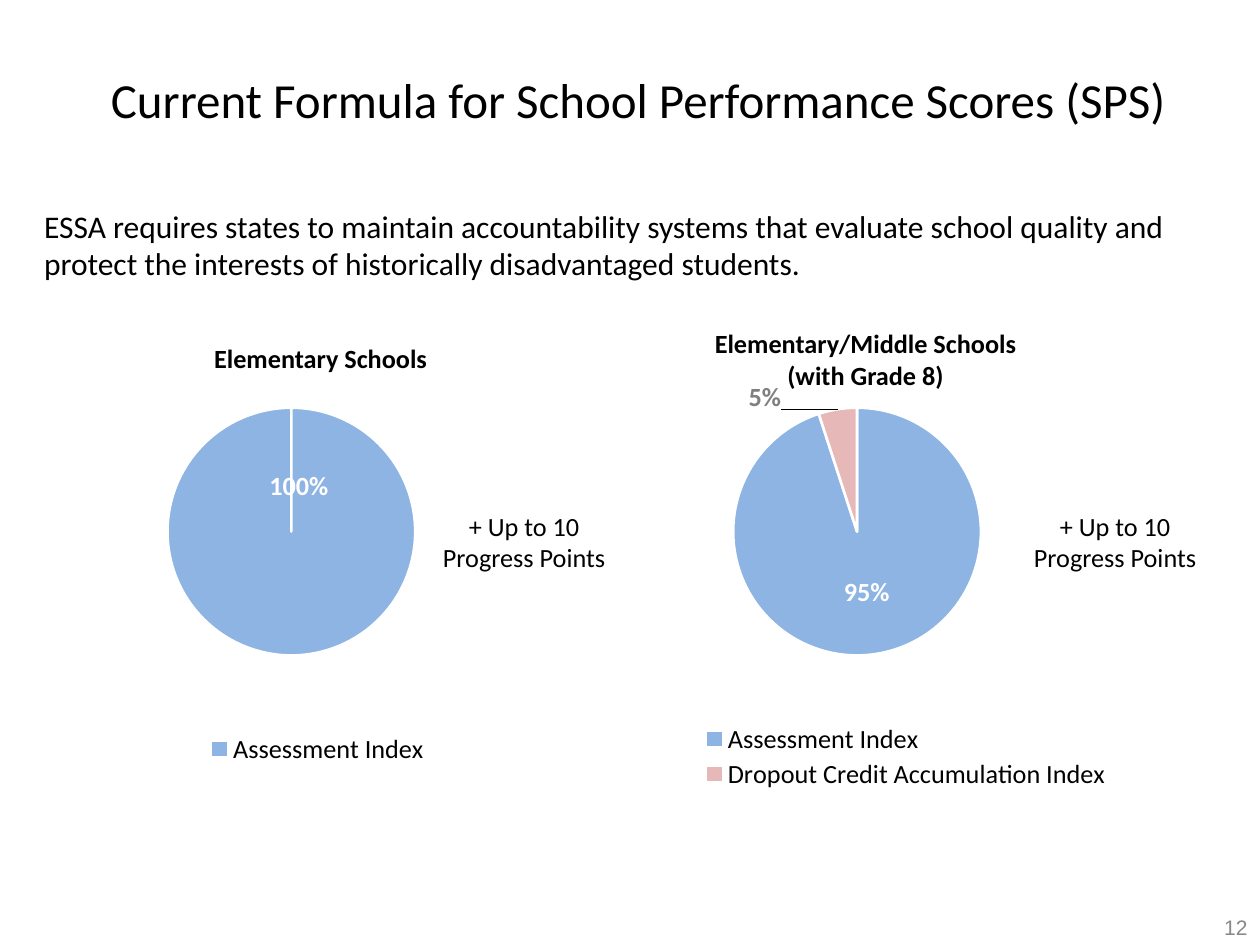
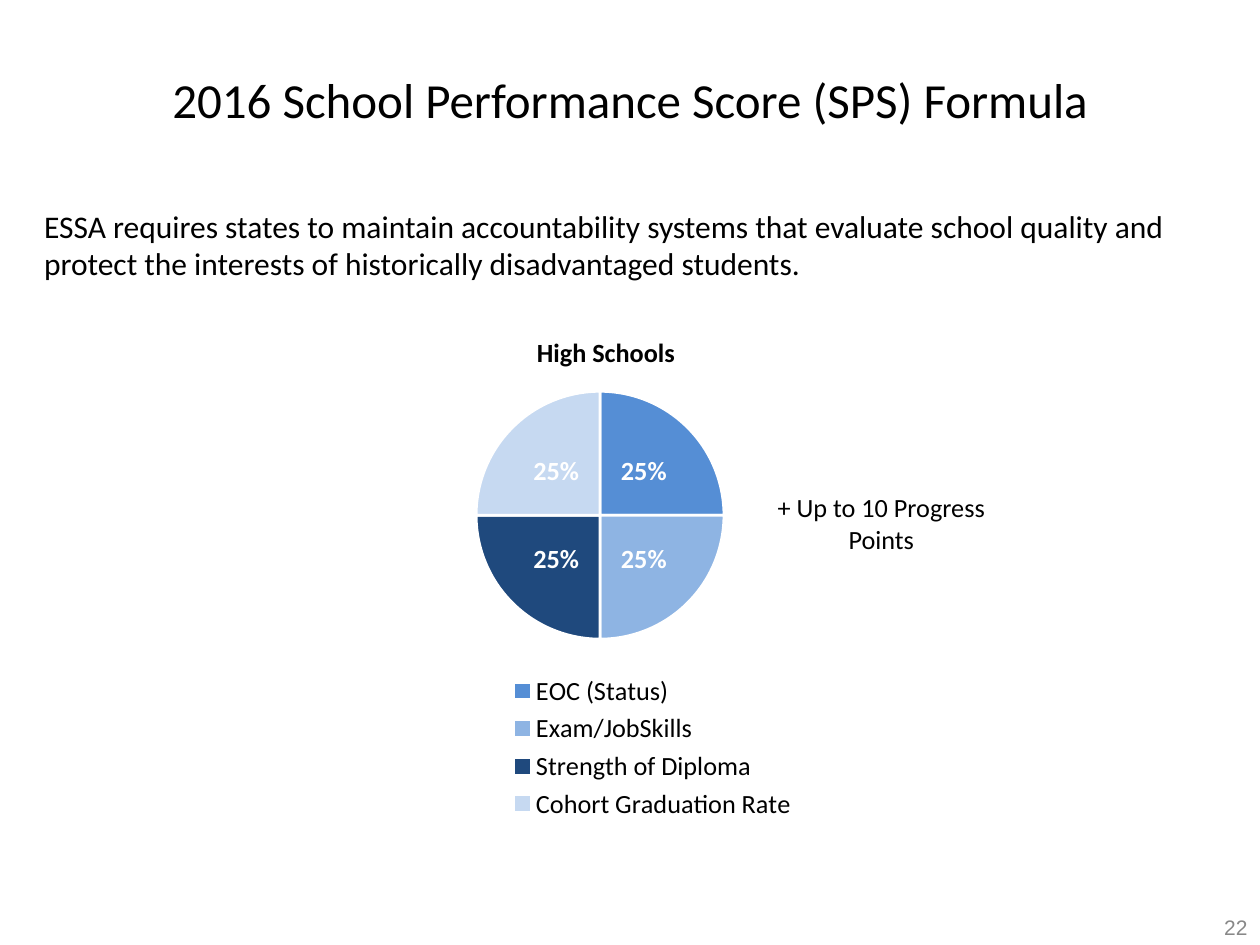
from dataclasses import dataclass

from pptx import Presentation
from pptx.chart.data import CategoryChartData
from pptx.dml.color import RGBColor
from pptx.enum.chart import XL_CHART_TYPE, XL_LABEL_POSITION, XL_LEGEND_POSITION
from pptx.enum.text import MSO_ANCHOR, MSO_AUTO_SIZE, PP_ALIGN
from pptx.oxml import parse_xml
from pptx.oxml.ns import nsdecls, qn
from pptx.util import Emu, Pt

EMU_PER_PX = 9144
CHART_WIDTH, CHART_HEIGHT = 596, 388
PLOT_AREA = {"x": 0.27, "y": 0.08, "w": 0.33, "h": 0.51}
INTRODUCTION = (
    "ESSA requires states to maintain accountability systems that evaluate school "
    "quality and protect the interests of historically disadvantaged students."
)
PROGRESS_POINTS = "+ Up to 10 Progress Points"


@dataclass(frozen=True)
class Theme:
    """Colours, fonts and type sizes shared by the slides."""

    font: str = "Calibri"
    number_font: str = "Arial"
    text: str = "000000"
    white: str = "FFFFFF"
    page_number: str = "888888"
    outside_label: str = "7F7F7F"
    sky: str = "8EB4E3"
    rose: str = "E6B9B8"
    blue: str = "558ED5"
    navy: str = "1F497D"
    pale: str = "C6D9F1"
    title_size: int = 28
    body_size: int = 18
    label_size: int = 15
    small_size: int = 12


def px(length):
    """Turn whole px into EMU."""
    return Emu(length * EMU_PER_PX)


def make_layout(target=None, **fractions):
    """Return a manual chart layout from fractions of the chart's size."""
    parts = f'<c:layoutTarget val="{target}"/>' if target else ""
    if "w" in fractions:
        parts += '<c:xMode val="edge"/><c:yMode val="edge"/>'
    parts += "".join(f'<c:{name} val="{value}"/>' for name, value in fractions.items())
    return parse_xml(
        f'<c:layout {nsdecls("c")}><c:manualLayout>{parts}</c:manualLayout></c:layout>'
    )


class Deck:
    """Hold the theme and the current slide, and draw each kind of element."""

    def __init__(self, theme):
        """Start an empty presentation."""
        self.theme = theme
        self.presentation = Presentation()
        self.presentation.slide_width = px(1000)
        self.presentation.slide_height = px(750)
        self.slide = None

    def format_font(self, font, size, color=None, bold=False, name=None):
        """Apply the theme's font with a size, colour and weight."""
        font.name = name or self.theme.font
        font.size = Pt(size)
        font.bold = bold
        font.color.rgb = RGBColor.from_string(color or self.theme.text)

    def add_slide(self, title, left, width, number):
        """Add a slide with its title, introduction and page number."""
        theme = self.theme
        self.slide = self.presentation.slides.add_slide(
            self.presentation.slide_layouts.get_by_name("Title Only")
        )
        shape = self.slide.shapes.title
        shape.left, shape.top = px(left), px(6)
        shape.width, shape.height = px(width), px(145)
        frame = shape.text_frame
        frame.text = title
        frame.auto_size = MSO_AUTO_SIZE.NONE
        frame.vertical_anchor = MSO_ANCHOR.MIDDLE
        frame.margin_left = frame.margin_right = px(10)
        frame.margin_top = frame.margin_bottom = px(10)
        paragraph = frame.paragraphs[0]
        paragraph.alignment = PP_ALIGN.CENTER
        self.format_font(paragraph.font, theme.title_size)

        introduction = self.add_text(
            INTRODUCTION, 0, 159, 1000, 71, theme.body_size, alignment=PP_ALIGN.LEFT
        )
        introduction.margin_left = px(35)
        page_number = self.add_text(
            str(number), 767, 717, 233, 37, theme.small_size, alignment=PP_ALIGN.RIGHT,
            color=theme.page_number, name=theme.number_font,
        )
        page_number.vertical_anchor = MSO_ANCHOR.MIDDLE

    def add_text(self, text, left, top, width, height, size=None,
                 alignment=PP_ALIGN.CENTER, **font_style):
        """Add a wrapping text box and return its text frame."""
        box = self.slide.shapes.add_textbox(px(left), px(top), px(width), px(height))
        frame = box.text_frame
        frame.word_wrap = True
        frame.text = text
        paragraph = frame.paragraphs[0]
        paragraph.alignment = alignment
        self.format_font(paragraph.font, size or self.theme.label_size, **font_style)
        return frame

    def add_pie(self, left, top, slices, legend_box):
        """Add a pie from (category, share, colour) slices and return its series."""
        theme = self.theme
        data = CategoryChartData(number_format="0%")
        data.categories = [category for category, _, _ in slices]
        data.add_series("Series 1", [share for _, share, _ in slices])
        chart = self.slide.shapes.add_chart(
            XL_CHART_TYPE.PIE, px(left), px(top), px(CHART_WIDTH), px(CHART_HEIGHT), data
        ).chart
        chart.has_title = False
        self.format_font(chart.font, theme.small_size)
        chart.has_legend = True
        chart.legend.position = XL_LEGEND_POSITION.BOTTOM
        chart.legend.include_in_layout = False
        self.format_font(chart.legend.font, theme.label_size)
        self.arrange_chart(chart, legend_box)

        plot = chart.plots[0]
        plot.vary_by_categories = True
        series = plot.series[0]
        labels = series.data_labels
        labels.show_value = True
        labels.number_format = "0%"
        labels.number_format_is_linked = False
        labels.position = XL_LABEL_POSITION.CENTER
        self.format_font(labels.font, theme.label_size, theme.white, bold=True)
        for index, (_, _, color) in enumerate(slices):
            point_format = series.points[index].format
            point_format.fill.solid()
            point_format.fill.fore_color.rgb = RGBColor.from_string(color)
            point_format.line.color.rgb = RGBColor.from_string(theme.white)
            point_format.line.width = Pt(1.5)
        return series

    def arrange_chart(self, chart, legend_box):
        """Clear the chart's background and place its plot and legend."""
        chart_space = chart.element
        chart_space.find(qn("c:chart")).addnext(parse_xml(
            f'<c:spPr {nsdecls("c", "a")}><a:noFill/><a:ln><a:noFill/></a:ln></c:spPr>'
        ))
        plot_area = chart_space.find(f".//{qn('c:plotArea')}")
        for layout in plot_area.findall(qn("c:layout")):
            plot_area.remove(layout)
        plot_area.insert(0, make_layout("inner", **PLOT_AREA))
        legend = chart_space.find(f".//{qn('c:legend')}")
        for layout in legend.findall(qn("c:layout")):
            legend.remove(layout)
        legend.find(qn("c:legendPos")).addnext(
            make_layout(**dict(zip("xywh", legend_box)))
        )

    def move_label(self, series, index, x, y, color):
        """Shift one slice's label by fractions of the chart's size."""
        label = series.points[index].data_label
        self.format_font(label.font, self.theme.label_size, color, bold=True)
        label.position = XL_LABEL_POSITION.CENTER
        for element in series.data_labels._element.findall(qn("c:dLbl")):
            position = element.find(qn("c:idx"))
            if position.get("val") == str(index):
                position.addnext(make_layout(x=x, y=y))


def add_elementary_slide(deck):
    """Compare the elementary and middle school formulas."""
    theme = deck.theme
    deck.add_slide("Current Formula for School Performance Scores (SPS)", 50, 913, 12)
    assessment = "Assessment Index"
    middle = deck.add_pie(
        421, 292,
        [(assessment, 0.95, theme.sky),
         ("Dropout Credit Accumulation Index", 0.05, theme.rose)],
        (0.22, 0.72, 0.56, 0.15),
    )
    deck.move_label(middle, 1, -0.11, -0.15, theme.outside_label)
    elementary = deck.add_pie(
        -28, 292, [(assessment, 1, theme.sky)], (0.27, 0.74, 0.4, 0.08)
    )
    deck.move_label(elementary, 0, 0.01, -0.22, theme.white)
    for left in (338, 807):
        deck.add_text(PROGRESS_POINTS, left, 400, 156, 61)
    deck.add_text("Elementary Schools", 156, 267, 197, 35, bold=True)
    deck.add_text(
        "Elementary/Middle Schools (with Grade 8)", 549, 255, 276, 61, bold=True
    )


def add_high_school_slide(deck):
    """Show the high school formula."""
    theme = deck.theme
    deck.add_slide("2016 School Performance Score (SPS) Formula", 69, 862, 22)
    measures = {
        "EOC (Status)": theme.blue,
        "Exam/JobSkills": theme.sky,
        "Strength of Diploma": theme.navy,
        "Cohort Graduation Rate": theme.pale,
    }
    share = 1 / len(measures)
    deck.add_pie(
        217, 279,
        [(measure, share, color) for measure, color in measures.items()],
        (0.3, 0.65, 0.41, 0.32),
    )
    deck.add_text("High Schools", 346, 262, 270, 35, bold=True)
    deck.add_text(PROGRESS_POINTS, 601, 385, 197, 61)


def main():
    """Build and save the presentation."""
    deck = Deck(Theme())
    add_elementary_slide(deck)
    add_high_school_slide(deck)
    deck.presentation.save("out.pptx")


if __name__ == "__main__":
    main()
